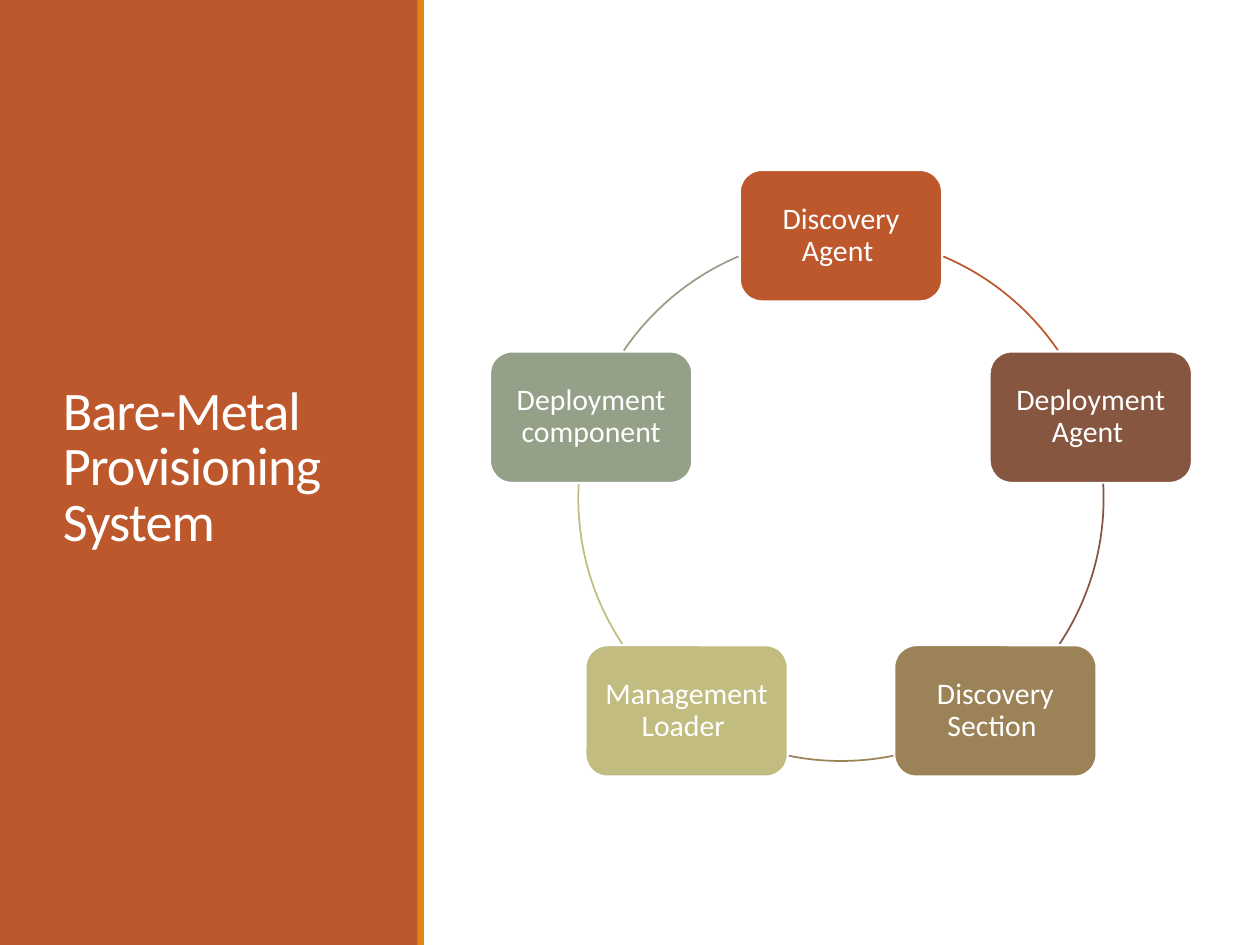
from math import cos, radians, sin

from pptx import Presentation
from pptx.dml.color import RGBColor
from pptx.enum.shapes import MSO_SHAPE
from pptx.enum.text import MSO_ANCHOR, PP_ALIGN
from pptx.util import Pt

WHITE, RUST, ORANGE = "FFFFFF", "BD582C", "E48312"
RING_X, RING_Y, RADIUS = 480.6, 284.8, 150.1
NODE_WIDTH, NODE_HEIGHT = 115.6, 75.1

# Label, colour, and the angles in degrees where the arc to the next node runs
COMPONENTS = [
    ("Discovery Agent ", RUST, 292.95, 325.75),
    ("Deployment Agent ", "865640", 356.8, 33.65),
    ("Discovery Section ", "9B8357", 78.5, 101.5),
    ("Management Loader ", "C2BC80", 146.35, 183.2),
    ("Deployment component", "94A088", 214.25, 247.05),
]


def rgb(colour):
    return RGBColor.from_string(colour)


class SlideBuilder:
    font = "Calibri"
    text_colour = WHITE

    def __init__(self, slide):
        self.slide = slide

    def shape(self, kind, left, top, width, height, fill=None, line=None, weight=1):
        shape = self.slide.shapes.add_shape(kind, Pt(left), Pt(top), Pt(width), Pt(height))
        shape.shadow.inherit = False
        if fill:
            shape.fill.solid()
            shape.fill.fore_color.rgb = rgb(fill)
        else:
            shape.fill.background()
        if line:
            shape.line.color.rgb = rgb(line)
            shape.line.width = Pt(weight)
        else:
            shape.line.fill.background()
        return shape

    def bar(self, left, width, fill):
        self.shape(MSO_SHAPE.RECTANGLE, left, 0, width, 540, fill)

    def set_text(self, frame, text, size, spacing, align):
        frame.word_wrap = True
        frame.vertical_anchor = MSO_ANCHOR.MIDDLE
        frame.text = text
        paragraph = frame.paragraphs[0]
        paragraph.alignment = align
        paragraph.line_spacing = spacing
        run = paragraph.runs[0]
        run.font.name = self.font
        run.font.size = Pt(size)
        run.font.color.rgb = rgb(self.text_colour)
        return run

    def title(self, text, left, top, width, height):
        box = self.slide.shapes.add_textbox(Pt(left), Pt(top), Pt(width), Pt(height))
        run = self.set_text(box.text_frame, text, 31, 0.85, PP_ALIGN.LEFT)
        run.font._element.set("spc", "-50")

    def node(self, label, centre_x, centre_y, fill):
        node = self.shape(
            MSO_SHAPE.ROUNDED_RECTANGLE,
            centre_x - NODE_WIDTH / 2, centre_y - NODE_HEIGHT / 2,
            NODE_WIDTH, NODE_HEIGHT, fill, WHITE, 1.25,
        )
        frame = node.text_frame
        frame.margin_left = frame.margin_right = Pt(5)
        frame.margin_top = frame.margin_bottom = Pt(5)
        self.set_text(frame, label, 17, 0.9, PP_ALIGN.CENTER)

    def ring_arc(self, start, end, colour):
        arc = self.shape(
            MSO_SHAPE.ARC, RING_X - RADIUS, RING_Y - RADIUS,
            2 * RADIUS, 2 * RADIUS, line=colour,
        )
        # Angles are stored in 1/60000 degree, adjustments in 1/100000
        for index, angle in enumerate((start, end)):
            arc.adjustments[index] = angle * 0.6


def main():
    presentation = Presentation()
    presentation.slide_width, presentation.slide_height = Pt(720), Pt(540)
    builder = SlideBuilder(presentation.slides.add_slide(presentation.slide_layouts[6]))

    builder.bar(0, 239, RUST)
    builder.title("Bare-Metal Provisioning System", 28.8, 41, 182.2, 454.3)
    builder.bar(238.5, 3.8, ORANGE)

    step = 360 / len(COMPONENTS)
    for index, (label, colour, start, end) in enumerate(COMPONENTS):
        angle = radians(index * step - 90)
        builder.node(label, RING_X + RADIUS * cos(angle), RING_Y + RADIUS * sin(angle), colour)
        builder.ring_arc(start, end, colour)

    presentation.save("out.pptx")


if __name__ == "__main__":
    main()
